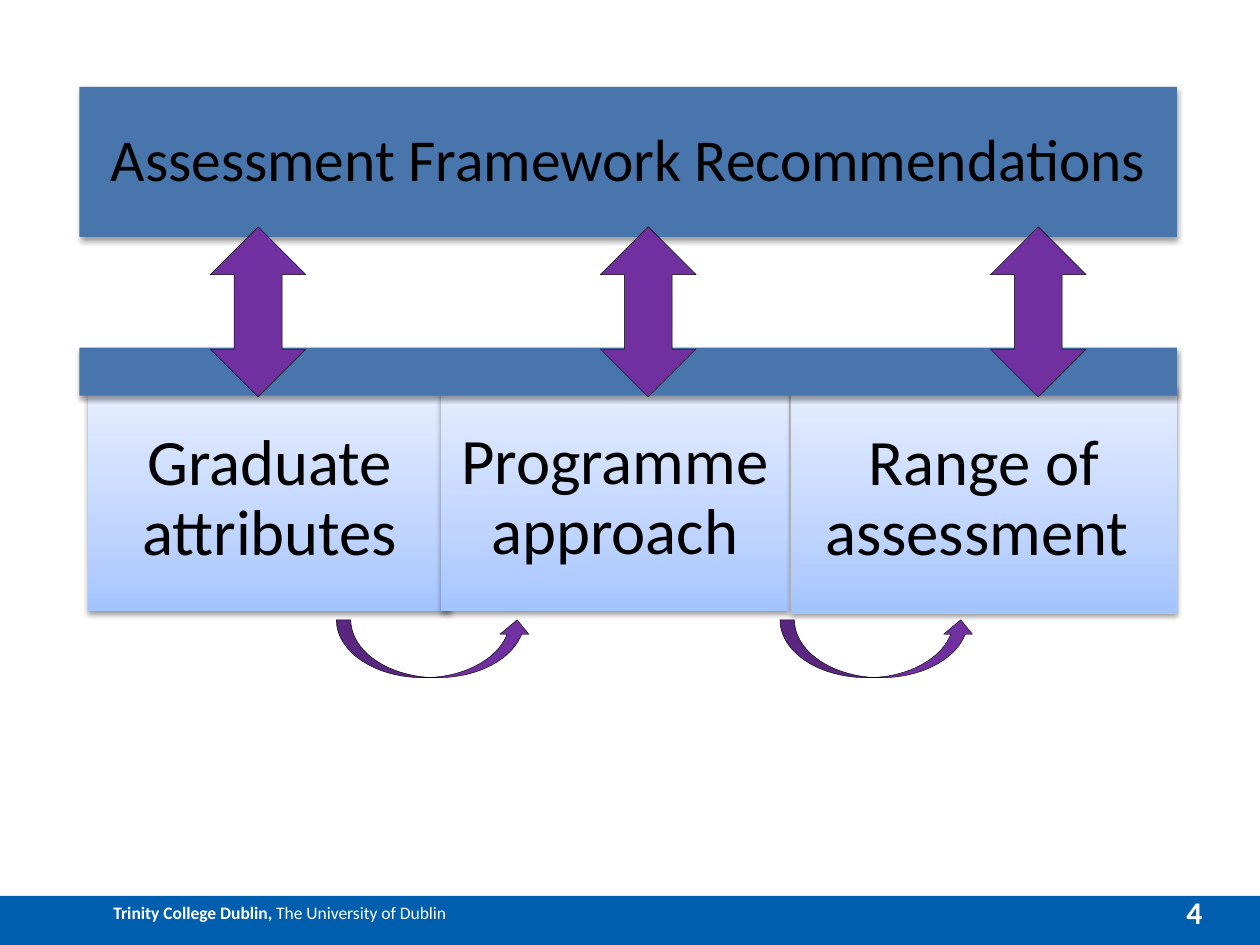
from copy import deepcopy
from dataclasses import dataclass

from lxml.etree import SubElement
from pptx import Presentation
from pptx.dml.color import RGBColor
from pptx.enum.shapes import MSO_SHAPE
from pptx.enum.text import MSO_ANCHOR, PP_ALIGN
from pptx.oxml.ns import qn
from pptx.util import Pt

FONT = "Calibri"
BAR_BLUE = "4875AC"
PURPLE = "7030A0"
PANEL_STOPS = ((0, "A4C4FF"), (0.35, "BFD4FF"), (1, "E6EEFF"))
LEFT, WIDTH = 45.4, 627.1


@dataclass
class Panel:
    """A rectangle with a shadow and an optional centred caption."""
    left: float
    top: float
    width: float
    height: float
    text: str = ""
    size: float = 37
    inset: float = 10.8
    fill: str | None = None


def color(value: str) -> RGBColor:
    """Turn a hex string into a colour."""
    return RGBColor.from_string(value)


def add_shape(page, kind, left: float, top: float, width: float, height: float):
    """Add a preset shape without line or shadow, placed in points."""
    shape = page.shapes.add_shape(kind, Pt(left), Pt(top), Pt(width), Pt(height))
    shape.shadow.inherit = False
    shape.line.fill.background()
    return shape


def fill_solid(shape, value: str) -> None:
    """Fill a shape with one colour."""
    shape.fill.solid()
    shape.fill.fore_color.rgb = color(value)


def fill_gradient(shape) -> None:
    """Fill a shape with the three-stop gradient, rising from the bottom."""
    shape.fill.gradient()
    shape.fill.gradient_angle = 90
    stop_list = shape._element.spPr.find(qn("a:gradFill")).find(qn("a:gsLst"))
    stop_list.append(deepcopy(stop_list[0]))
    for stop, (position, value) in zip(shape.fill.gradient_stops, PANEL_STOPS):
        stop.position = position
        stop.color.rgb = color(value)


def add_shadow(shape) -> None:
    """Cast a soft shadow straight down."""
    effects = shape._element.spPr.find(qn("a:effectLst"))
    shadow = SubElement(effects, qn("a:outerShdw"), blurRad=str(Pt(3.1)),
                        dist=str(Pt(1.6)), dir="5400000", rotWithShape="0")
    tint = SubElement(shadow, qn("a:srgbClr"), val="000000")
    SubElement(tint, qn("a:alpha"), val="38000")


def set_font(font, size: float, value: str, bold: bool | None = None) -> None:
    """Set typeface, size, colour and weight."""
    font.name, font.size, font.bold = FONT, Pt(size), bold
    font.color.rgb = color(value)


def draw_panel(page, panel: Panel) -> None:
    """Draw a panel and its caption."""
    shape = add_shape(page, MSO_SHAPE.RECTANGLE, panel.left, panel.top,
                      panel.width, panel.height)
    if panel.fill:
        fill_solid(shape, panel.fill)
    else:
        fill_gradient(shape)
    add_shadow(shape)
    if not panel.text:
        return
    frame = shape.text_frame
    frame.word_wrap = True
    frame.vertical_anchor = MSO_ANCHOR.MIDDLE
    frame.margin_left = frame.margin_right = Pt(panel.inset)
    frame.margin_top = frame.margin_bottom = Pt(panel.inset)
    para = frame.paragraphs[0]
    para.text = panel.text
    para.alignment = PP_ALIGN.CENTER
    para.line_spacing = 0.9
    set_font(para.font, panel.size, "000000")


def draw_arrow(page, kind, left: float, top: float, width: float, height: float) -> None:
    """Draw a purple block arrow with a thin black outline."""
    arrow = add_shape(page, kind, left, top, width, height)
    fill_solid(arrow, PURPLE)
    arrow.line.color.rgb = color("000000")
    arrow.line.width = Pt(0.25)


def draw_footer(page) -> None:
    """Draw the footer band with the college name and the page number."""
    band = add_shape(page, MSO_SHAPE.RECTANGLE, 0, 511.9, 720, 28.1)
    fill_solid(band, "005EAE")
    frame = band.text_frame
    frame.vertical_anchor = MSO_ANCHOR.TOP
    frame.margin_left = Pt(64.8)
    para = frame.paragraphs[0]
    para.alignment = PP_ALIGN.LEFT
    set_font(para.font, 10, "FFFFFF")
    for text, bold in (("Trinity College Dublin, ", True),
                       ("The University of Dublin", False)):
        span = para.add_run()
        span.text = text
        set_font(span.font, 10, "FFFFFF", bold)

    box = page.shapes.add_textbox(Pt(621.4), Pt(506.9), Pt(72.7), Pt(28.8))
    box.text_frame.word_wrap = True
    number = box.text_frame.paragraphs[0]
    number.text = "4"
    number.alignment = PP_ALIGN.RIGHT
    set_font(number.font, 18, "FFFFFF", True)


def main() -> None:
    """Build the slide and save the deck."""
    deck = Presentation()
    deck.slide_width, deck.slide_height = Pt(720), Pt(540)
    page = deck.slides.add_slide(deck.slide_layouts[6])
    draw_footer(page)
    panels = (
        Panel(LEFT, 49.7, WIDTH, 85.7, "Assessment Framework Recommendations",
              34, 10.1, BAR_BLUE),
        Panel(50.4, 221.8, 207.4, 127.4, "Graduate attributes"),
        Panel(252, 220.3, 198.7, 128.9, "Programme approach"),
        Panel(452.2, 220.3, 220.3, 130.3, "Range of assessment "),
        Panel(LEFT, 198.7, WIDTH, 27.4, fill=BAR_BLUE),
    )
    for panel in panels:
        draw_panel(page, panel)
    for column in range(2):
        draw_arrow(page, MSO_SHAPE.CURVED_UP_ARROW, 192.2 + 253.5 * column, 354.2, 111.6, 33.1)
    for column in range(3):
        draw_arrow(page, MSO_SHAPE.UP_DOWN_ARROW, 120.2 + 222.9 * column, 129.6, 54.7, 97.2)
    deck.save("out.pptx")


if __name__ == "__main__":
    main()
